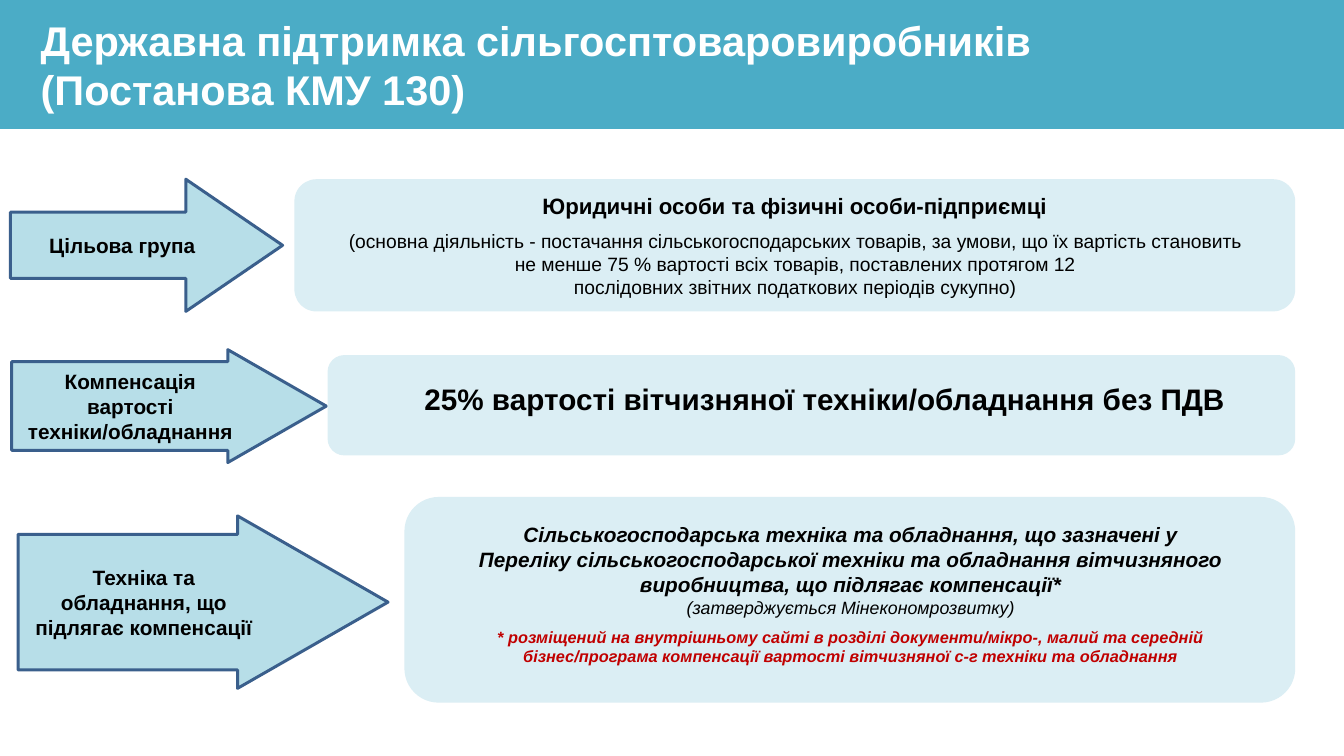
from pptx import Presentation
from pptx import util as u
from pptx.dml.color import RGBColor
from pptx.enum import shapes, text

Cm, Pt = u.Cm, u.Pt
COLORS = {"band": "4BACC6", "panel": "DBEEF4", "arrow": "B7DEE8",
          "outline": "3A5F8C", "white": "FFFFFF", "black": "000000", "note": "C00000"}
PANEL_RIGHT = 30.84

prs = Presentation()
prs.slide_width, prs.slide_height = Cm(32), Cm(18.01)
slide = prs.slides.add_slide(prs.slide_layouts[6])


def add_block(kind, box, fill, outline=None):
    block = slide.shapes.add_shape(kind, *[Cm(v) for v in box])
    block.shadow.inherit = False
    block.fill.solid()
    block.fill.fore_color.rgb = RGBColor.from_string(COLORS[fill])
    if outline:
        block.line.color.rgb = RGBColor.from_string(COLORS[outline])
        block.line.width = Pt(2)
    else:
        block.line.fill.background()
    return block


def write(holder, lines, align=text.PP_ALIGN.CENTER, anchor=text.MSO_ANCHOR.MIDDLE,
          left=0.33, bottom=0.15):
    """Each line is (wording, size, style letters, colour, space before)."""
    frame = holder.text_frame
    frame.word_wrap = True
    frame.vertical_anchor = anchor
    frame.margin_left, frame.margin_right = Cm(left), Cm(0.33)
    frame.margin_top, frame.margin_bottom = Cm(0.15), Cm(bottom)
    frame.text = "\n".join(line[0] for line in lines)
    for paragraph, (_, size, style, color, gap) in zip(frame.paragraphs, lines):
        paragraph.alignment = align
        paragraph.space_before = Pt(gap)
        font = paragraph.runs[0].font
        font.name, font.size = "Arial", Pt(size)
        font.bold, font.italic = "b" in style, "i" in style
        font.color.rgb = RGBColor.from_string(COLORS[color])


# Title band
title = add_block(shapes.MSO_SHAPE.RECTANGLE, (0, 0, 32, 3.07), "band")
write(title, [("Державна підтримка сільгосптоваровиробників", 28, "b", "white", 0),
              ("(Постанова КМУ 130)", 28, "b", "white", 0)],
      align=text.PP_ALIGN.LEFT, left=0.97)

# Arrows with the row labels: box, adjustments, label lines
arrows = [
    ((0.25, 4.27, 6.48, 3.15), (0.5, 0.732), ["Цільова група"]),
    ((0.28, 8.33, 7.49, 2.69), (0.786, 0.872),
     ["Компенсація", "вартості техніки/обладнання"]),
    ((0.43, 12.29, 8.81, 4.11), (0.786, 0.872),
     ["Техніка та обладнання, що підлягає компенсації"]),
]
for box, (shaft, head), labels in arrows:
    arrow = add_block(shapes.MSO_SHAPE.RIGHT_ARROW, box, "arrow", "outline")
    arrow.adjustments[0], arrow.adjustments[1] = shaft, head
    write(arrow, [(label, 14, "b", "black", 0) for label in labels])

# Panels, all ending at the same right edge: left, top, height
group_panel, share_panel, machinery_panel = [
    add_block(shapes.MSO_SHAPE.ROUNDED_RECTANGLE,
              (left, top, PANEL_RIGHT - left, height), "panel")
    for left, top, height in [(7.01, 4.27, 3.15), (7.8, 8.46, 2.39), (9.63, 11.84, 4.9)]]

write(group_panel, [
    ("Юридичні особи та фізичні особи-підприємці", 15, "b", "black", 0),
    ("(основна діяльність - постачання сільськогосподарських товарів, "
     "за умови, що їх вартість становить", 13, "", "black", 7),
    ("не менше 75 % вартості всіх товарів, поставлених протягом 12", 13, "", "black", 0),
    ("послідовних звітних податкових періодів сукупно)", 13, "", "black", 0)])

write(share_panel, [
    ("25% вартості вітчизняної техніки/обладнання без ПДВ", 20, "b", "black", 0)],
    left=0.97, bottom=0.48)

# Machinery list text over the last panel
machinery = slide.shapes.add_textbox(Cm(10.57), Cm(12.29), Cm(19.38), Cm(3.78))
write(machinery, [
    ("Сільськогосподарська техніка та обладнання, що зазначені у", 14, "bi", "black", 0),
    ("Переліку сільськогосподарської техніки та обладнання вітчизняного "
     "виробництва, що підлягає компенсації*", 14, "bi", "black", 0),
    ("(затверджується Мінекономрозвитку)", 12, "i", "black", 0),
    ("* розміщений на внутрішньому сайті в розділі документи/мікро-, малий та середній "
     "бізнес/програма компенсації вартості вітчизняної с-г техніки та обладнання",
     11, "bi", "note", 6)],
    anchor=text.MSO_ANCHOR.TOP)

prs.save("out.pptx")
